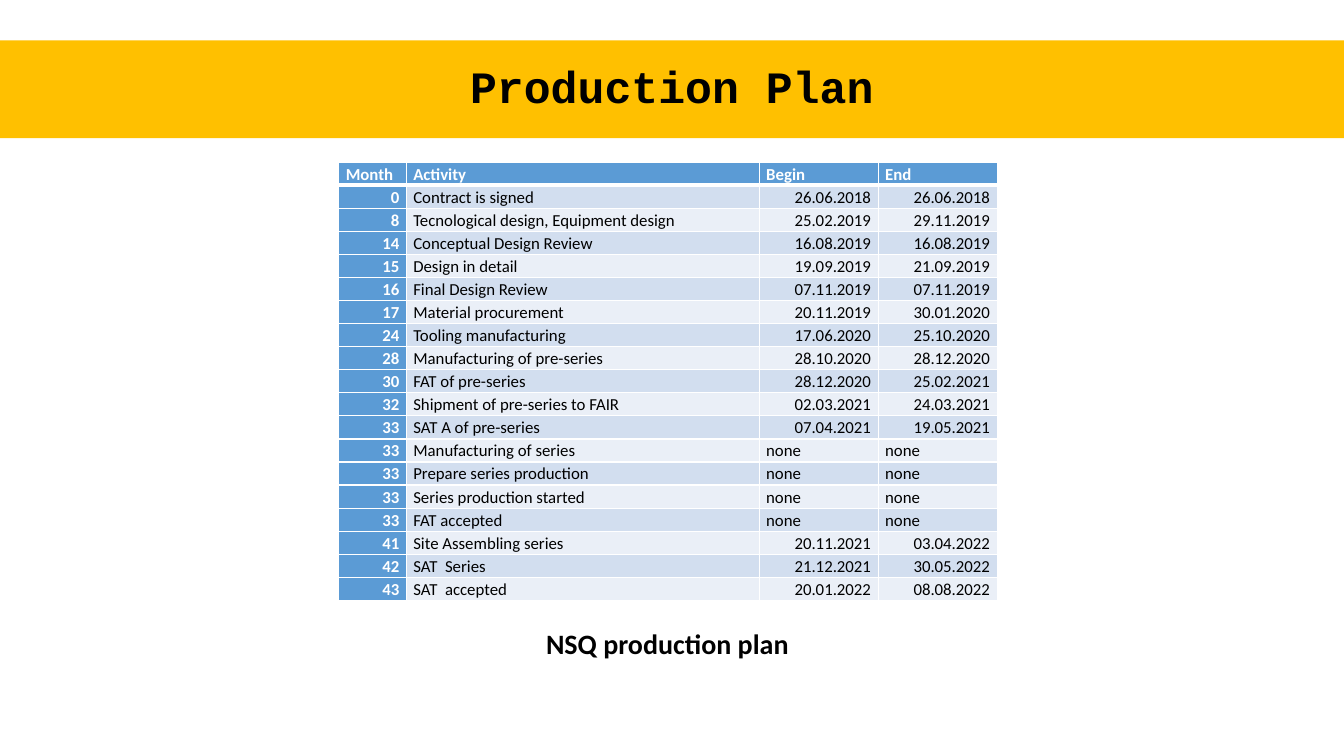
from lxml import etree
from pptx import Presentation
from pptx.dml.color import RGBColor
from pptx.enum.text import MSO_ANCHOR as Anchor, PP_ALIGN as Align
from pptx.oxml.ns import qn
from pptx.util import Inches, Pt

AMBER = RGBColor(0xFF, 0xC0, 0x00)
BLUE = RGBColor(0x5B, 0x9B, 0xD5)
BAND_DARK = RGBColor(0xD2, 0xDE, 0xEF)
BAND_LIGHT = RGBColor(0xEA, 0xEF, 0xF7)
BLACK = RGBColor(0x00, 0x00, 0x00)
WHITE = RGBColor(0xFF, 0xFF, 0xFF)

HEADINGS = ("Month", "Activity", "Begin", "End")
ACTIVITIES = [
    ("0", "Contract is signed", "26.06.2018", "26.06.2018"),
    ("8", "Tecnological design, Equipment design", "25.02.2019", "29.11.2019"),
    ("14", "Conceptual Design Review", "16.08.2019", "16.08.2019"),
    ("15", "Design in detail", "19.09.2019", "21.09.2019"),
    ("16", "Final Design Review", "07.11.2019", "07.11.2019"),
    ("17", "Material procurement", "20.11.2019", "30.01.2020"),
    ("24", "Tooling manufacturing", "17.06.2020", "25.10.2020"),
    ("28", "Manufacturing of pre-series", "28.10.2020", "28.12.2020"),
    ("30", "FAT of pre-series", "28.12.2020", "25.02.2021"),
    ("32", "Shipment of pre-series to FAIR", "02.03.2021", "24.03.2021"),
    ("33", "SAT A of pre-series", "07.04.2021", "19.05.2021"),
    ("33", "Manufacturing of series", "none", "none"),
    ("33", "Prepare series production", "none", "none"),
    ("33", "Series production started", "none", "none"),
    ("33", "FAT accepted", "none", "none"),
    ("41", "Site Assembling series", "20.11.2021", "03.04.2022"),
    ("42", "SAT  Series", "21.12.2021", "30.05.2022"),
    ("43", "SAT  accepted", "20.01.2022", "08.08.2022"),
]
COLUMN_WIDTHS = (0.67, 3.5, 1.18, 1.18)


def write_text(frame, text, size, font="Calibri", color=BLACK, bold=False,
               align=Align.LEFT, spacing=1.0):
    paragraph = frame.paragraphs[0]
    paragraph.alignment = align
    paragraph.line_spacing = spacing
    run = paragraph.add_run()
    run.text = text
    run.font.size = Pt(size)
    run.font.name = font
    run.font.bold = bold
    run.font.color.rgb = color


def add_border(cell, side, points):
    """Draw a white line on one side (L, R, T or B); call before the fill is set."""
    properties = cell._tc.get_or_add_tcPr()
    line = etree.SubElement(properties, qn(f"a:ln{side}"), w=str(Pt(points)))
    fill = etree.SubElement(line, qn("a:solidFill"))
    etree.SubElement(fill, qn("a:srgbClr"), val=str(WHITE))


def place_title(slide, left, top, width, height):
    title = slide.shapes.title
    title.left, title.top = Inches(left), Inches(top)
    title.width, title.height = Inches(width), Inches(height)
    title.fill.solid()
    title.fill.fore_color.rgb = AMBER
    title.text_frame.vertical_anchor = Anchor.MIDDLE
    write_text(title.text_frame, "Production Plan", 32, font="Courier New",
               bold=True, align=Align.CENTER, spacing=0.9)


def format_cell(cell, text, row, column):
    cell.margin_left = cell.margin_right = Inches(0.07)
    cell.margin_top = cell.margin_bottom = 0
    cell.vertical_anchor = Anchor.MIDDLE
    for side in "LRTB":
        under_header = (row, side) in ((0, "B"), (1, "T"))
        add_border(cell, side, 3 if under_header else 1)
    is_heading = row == 0 or column == 0
    band = BAND_DARK if row % 2 else BAND_LIGHT
    cell.fill.solid()
    cell.fill.fore_color.rgb = BLUE if is_heading else band
    is_number = text[0].isdigit()
    write_text(cell.text_frame, text, 12, color=WHITE if is_heading else BLACK,
               bold=is_heading, align=Align.RIGHT if is_number else Align.LEFT,
               spacing=1.07)


def add_schedule(slide, left, top, width, height):
    rows = [HEADINGS, *ACTIVITIES]
    schedule = slide.shapes.add_table(
        len(rows), len(HEADINGS), Inches(left), Inches(top),
        Inches(width), Inches(height)).table
    for column, share in zip(schedule.columns, COLUMN_WIDTHS):
        column.width = Inches(width * share / sum(COLUMN_WIDTHS))
    for row, entries in enumerate(rows):
        schedule.rows[row].height = Inches(height / len(rows))
        for column, text in enumerate(entries):
            format_cell(schedule.cell(row, column), text, row, column)


def add_caption(slide, left, top, width, height):
    caption = slide.shapes.add_textbox(
        Inches(left), Inches(top), Inches(width), Inches(height)).text_frame
    caption.word_wrap = True
    caption.vertical_anchor = Anchor.BOTTOM
    write_text(caption, "NSQ production plan", 20, bold=True,
               align=Align.CENTER, spacing=0.8)


def main():
    deck = Presentation()
    deck.slide_width, deck.slide_height = Inches(13.33), Inches(7.5)
    slide = deck.slides.add_slide(deck.slide_layouts[5])
    place_title(slide, 0, 0.4, 13.33, 0.97)
    add_schedule(slide, 3.36, 1.61, 6.53, 4.35)
    add_caption(slide, 3.8, 6.22, 5.64, 0.38)
    deck.save("out.pptx")


if __name__ == "__main__":
    main()
